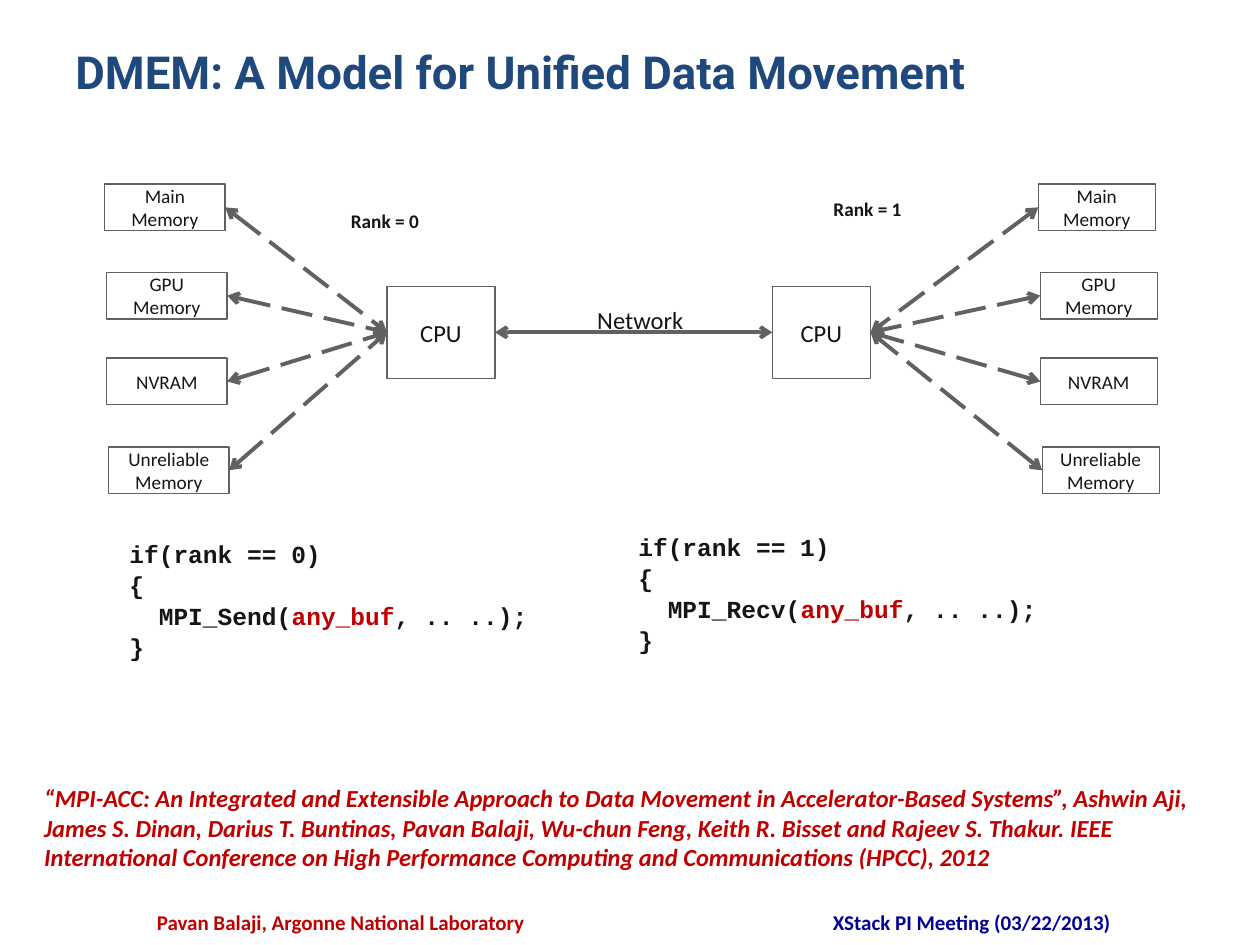
import pptx
import pptx.util
import pptx.dml.color
import pptx.enum.dml
import pptx.enum.shapes
import pptx.enum.text
from lxml import etree

Cm = pptx.util.Cm
Pt = pptx.util.Pt
CENTER = pptx.enum.text.PP_ALIGN.CENTER
LEFT = pptx.enum.text.PP_ALIGN.LEFT

INK, GRAY, RED, NAVY, BLUE = "151515", "616161", "C00000", "1F497D", "000099"

TITLE = "DMEM: A Model for Unified Data Movement"
CITATION = (
    "“MPI-ACC: An Integrated and Extensible Approach to Data Movement in "
    "Accelerator-Based Systems”, Ashwin Aji, James S. Dinan, Darius T. Buntinas, "
    "Pavan Balaji, Wu-chun Feng, Keith R. Bisset and Rajeev S. Thakur. IEEE "
    "International Conference on High Performance Computing and Communications "
    "(HPCC), 2012"
)
PRESENTER = "Pavan Balaji, Argonne National Laboratory"
MEETING = "XStack PI Meeting (03/22/2013)"

MEMORIES = [
    ("Main Memory", 0, 3.71),
    ("GPU Memory", 0.04, 5.49),
    ("NVRAM", 0.04, 7.22),
    ("Unreliable Memory", 0.08, 9.01),
]
MEMORY_HEIGHT = 0.94
CPU_TOP, CPU_HEIGHT = 5.77, 1.86
CPU_MIDDLE = CPU_TOP + CPU_HEIGHT / 2

RANKS = [
    dict(rank=0, call="MPI_Send", memory_left=2.11, memory_width=2.43,
         cpu_left=7.8, cpu_width=2.18, label=(6.78, 4.09), code=(2.36, 10.7, 8.86, 2.64)),
    dict(rank=1, call="MPI_Recv", memory_left=20.93, memory_width=2.36,
         cpu_left=15.57, cpu_width=1.98, label=(16.51, 3.86), code=(12.62, 10.56, 9.6, 2.64)),
]


def rgb(value):
    return pptx.dml.color.RGBColor.from_string(value)


def style(run, size, color, font="Calibri", bold=False, italic=False):
    run.font.name = font
    run.font.size = Pt(size)
    run.font.bold = bold
    run.font.italic = italic
    run.font.color.rgb = rgb(color)


def add_text(slide, place, text, size, color, align=LEFT, **look):
    box = slide.shapes.add_textbox(*[Cm(length) for length in place])
    box.text_frame.word_wrap = True
    paragraph = box.text_frame.paragraphs[0]
    paragraph.text = text
    paragraph.alignment = align
    style(paragraph.runs[0], size, color, **look)


def add_unit(slide, place, text, size):
    unit = slide.shapes.add_shape(
        pptx.enum.shapes.MSO_SHAPE.RECTANGLE, *[Cm(length) for length in place])
    unit.shadow.inherit = False
    unit.fill.background()
    unit.line.color.rgb = rgb(GRAY)
    unit.line.width = Pt(0.75)
    unit.text_frame.word_wrap = True
    unit.text_frame.vertical_anchor = pptx.enum.text.MSO_ANCHOR.MIDDLE
    paragraph = unit.text_frame.paragraphs[0]
    paragraph.text = text
    paragraph.alignment = CENTER
    style(paragraph.runs[0], size, INK)


def add_link(slide, start, end, dashed):
    link = slide.shapes.add_connector(
        pptx.enum.shapes.MSO_CONNECTOR.STRAIGHT,
        *[Cm(length) for length in (*start, *end)])
    link.line.color.rgb = rgb(GRAY)
    link.line.width = Pt(2.25)
    if dashed:
        link.line.dash_style = pptx.enum.dml.MSO_LINE.LONG_DASH
    outline = link.line._get_or_add_ln()
    for side in ("a:headEnd", "a:tailEnd"):
        etree.SubElement(outline, pptx.oxml.ns.qn(side), type="arrow")
    etree.SubElement(link._element.spPr, pptx.oxml.ns.qn("a:effectLst"))


def add_code(slide, place, rank, call):
    box = slide.shapes.add_textbox(*[Cm(length) for length in place])
    frame = box.text_frame
    frame.word_wrap = True
    lines = [
        [(f"if(rank == {rank})", INK)],
        [("{", INK)],
        [(f"  {call}(", INK), ("any_buf", RED), (", .. ..);", INK)],
        [("}", INK)],
    ]
    for number, parts in enumerate(lines):
        paragraph = frame.add_paragraph() if number else frame.paragraphs[0]
        paragraph.line_spacing = 1.06
        for text, color in parts:
            run = paragraph.add_run()
            run.text = text
            style(run, 14, color, font="Courier New", bold=True)


def add_rank(slide, rank, call, memory_left, memory_width, cpu_left, cpu_width, label, code):
    on_left = memory_left < cpu_left
    cpu_side = cpu_left if on_left else cpu_left + cpu_width
    add_unit(slide, (cpu_left, CPU_TOP, cpu_width, CPU_HEIGHT), "CPU", 14)
    for memory, shift, top in MEMORIES:
        left = memory_left + shift
        add_unit(slide, (left, top, memory_width, MEMORY_HEIGHT), memory, 11)
        memory_side = left + memory_width if on_left else left
        add_link(slide, (memory_side, top + MEMORY_HEIGHT / 2), (cpu_side, CPU_MIDDLE), True)
    add_text(slide, (*label, 1.96, 0.74), f"Rank = {rank}", 11, INK, CENTER, bold=True)
    add_code(slide, code, rank, call)


def main():
    deck = pptx.Presentation()
    deck.slide_width, deck.slide_height = Cm(25.4), Cm(19.05)
    slide = deck.slides.add_slide(deck.slide_layouts[6])

    add_text(slide, (1.27, 0.76, 22.86, 2.21), TITLE, 26, NAVY, font="Roboto", bold=True)
    for side in RANKS:
        add_rank(slide, **side)
    sender, receiver = RANKS
    add_link(slide, (receiver["cpu_left"], CPU_MIDDLE),
             (sender["cpu_left"] + sender["cpu_width"], CPU_MIDDLE), False)
    add_text(slide, (11.79, 6.02, 2.39, 0.86), "Network", 14, INK)
    add_text(slide, (0.64, 15.67, 23.93, 2.06), CITATION, 14, RED, bold=True, italic=True)
    add_text(slide, (2.74, 18.21, 8.26, 0.64), PRESENTER, 12, RED, CENTER, bold=True)
    add_text(slide, (14.61, 18.21, 9.96, 0.64), MEETING, 12, BLUE, CENTER, bold=True)
    deck.save("out.pptx")


if __name__ == "__main__":
    main()
